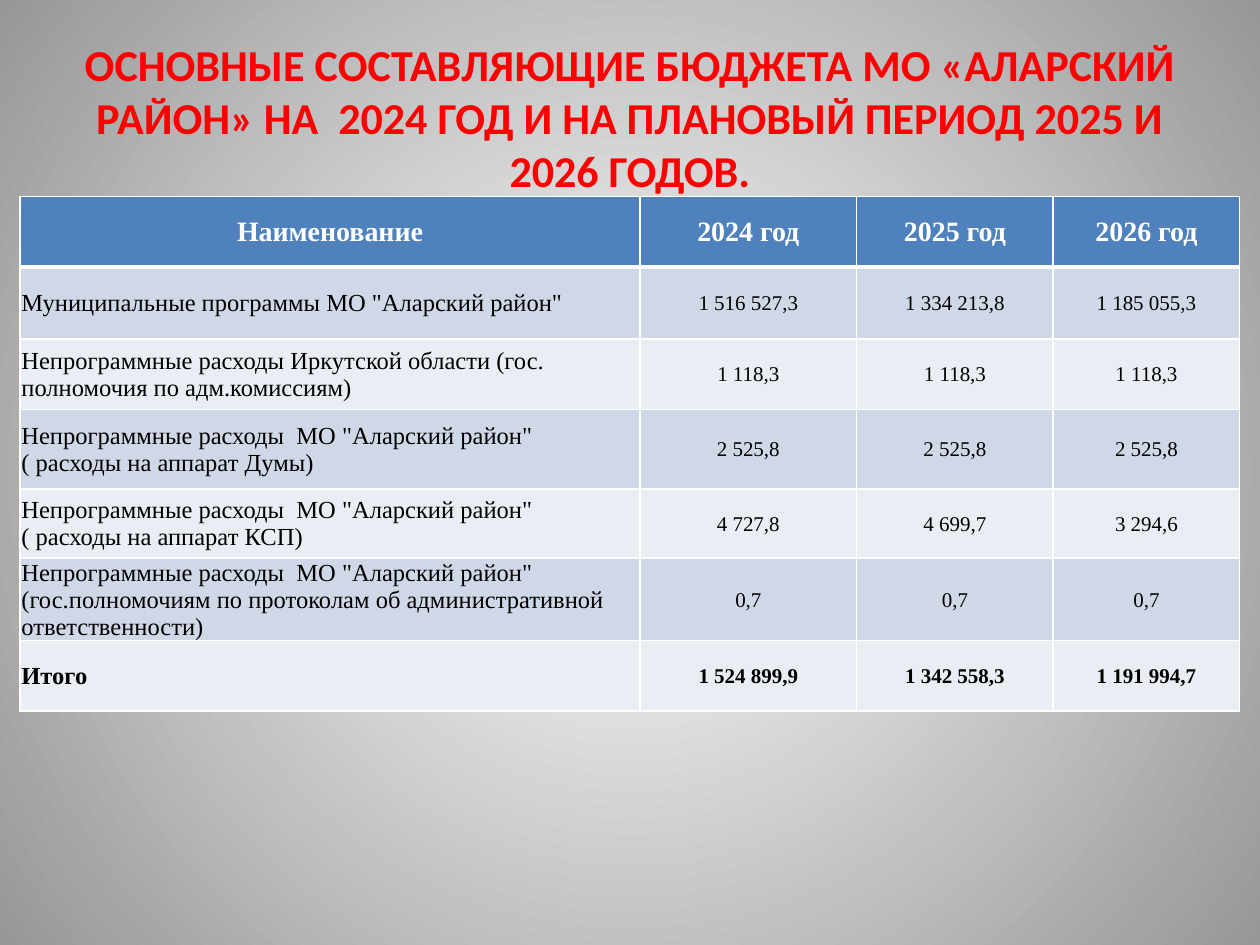
from lxml.etree import SubElement
from pptx import Presentation
from pptx.dml.color import RGBColor
from pptx.enum.text import MSO_ANCHOR, MSO_AUTO_SIZE, PP_ALIGN
from pptx.oxml.ns import qn
from pptx.util import Inches, Pt

COLORS = {
    "center": "FFFFFF", "edge": "979797", "title": "FF0000",
    "header": "4F81BD", "header_text": "FFFFFF", "text": "000000",
    "odd_row": "D0D8E8", "even_row": "E9EDF4", "border": "FFFFFF",
}
TITLE = ("ОСНОВНЫЕ СОСТАВЛЯЮЩИЕ БЮДЖЕТА МО «АЛАРСКИЙ РАЙОН» НА  2024 ГОД "
         "И НА ПЛАНОВЫЙ ПЕРИОД 2025 И 2026 ГОДОВ.")
BUDGET = [
    ("Наименование", "2024 год", "2025 год", "2026 год"),
    ('Муниципальные программы МО "Аларский район"',
     "1 516 527,3", "1 334 213,8", "1 185 055,3"),
    ("Непрограммные расходы Иркутской области (гос. полномочия по адм.комиссиям)",
     "1 118,3", "1 118,3", "1 118,3"),
    ('Непрограммные расходы  МО "Аларский район" ( расходы на аппарат Думы)',
     "2 525,8", "2 525,8", "2 525,8"),
    ('Непрограммные расходы  МО "Аларский район" ( расходы на аппарат КСП)',
     "4 727,8", "4 699,7", "3 294,6"),
    ('Непрограммные расходы  МО "Аларский район" (гос.полномочиям по '
     "протоколам об административной ответственности)", "0,7", "0,7", "0,7"),
    ("Итого", "1 524 899,9", "1 342 558,3", "1 191 994,7"),
]
COLUMN_WIDTHS = [4.92, 1.72, 1.56, 1.48]
ROW_HEIGHTS = [0.56, 0.57, 0.56, 0.63, 0.55, 0.65, 0.56]


def rgb(name):
    return RGBColor.from_string(COLORS[name])


def apply_format(target, values):
    for attribute, value in values.items():
        setattr(target, attribute, value)


def write_text(frame, text, align, color, **font_values):
    frame.text = text
    paragraph = frame.paragraphs[0]
    paragraph.alignment = align
    font = paragraph.runs[0].font
    apply_format(font, font_values)
    font.color.rgb = rgb(color)


def set_radial_background(slide):
    fill = slide.background.fill
    fill.gradient()
    for stop, name, position in zip(fill.gradient_stops, ("center", "edge"), (0, 1)):
        stop.color.rgb = rgb(name)
        stop.position = position
    gradient = slide.element.find(".//" + qn("a:gradFill"))
    gradient.remove(gradient.find(qn("a:lin")))
    circle = SubElement(gradient, qn("a:path"), {"path": "circle"})
    SubElement(circle, qn("a:fillToRect"), dict.fromkeys("ltrb", "50000"))


def add_title(slide, slide_width, slide_height):
    title = slide.shapes.title
    apply_format(title, {
        "left": int(slide_width * 0.05), "top": int(slide_height * 0.04),
        "width": int(slide_width * 0.9), "height": Inches(1.25),
    })
    write_text(title.text_frame, TITLE, PP_ALIGN.CENTER, "title",
               name="Calibri", size=Pt(25.2), bold=True)
    apply_format(title.text_frame, {
        "auto_size": MSO_AUTO_SIZE.NONE, "word_wrap": True,
        "vertical_anchor": MSO_ANCHOR.MIDDLE,
    })


def set_borders(cell, row):
    """Draw thin borders, with a thick rule between the header and the body."""
    widths = {"L": 1, "R": 1, "T": 3 if row == 1 else 1, "B": 3 if row == 0 else 1}
    properties = cell._tc.get_or_add_tcPr()
    for side, width in widths.items():
        line = SubElement(properties, qn(f"a:ln{side}"), {"w": str(Pt(width))})
        solid = SubElement(line, qn("a:solidFill"))
        SubElement(solid, qn("a:srgbClr"), {"val": COLORS["border"]})


def format_cell(cell, text, row, column):
    is_header = row == 0
    is_label = column == 0 and not is_header
    set_borders(cell, row)
    cell.fill.solid()
    cell.fill.fore_color.rgb = rgb(
        "header" if is_header else "odd_row" if row % 2 else "even_row")
    apply_format(cell, {
        "margin_left": Inches(0.01), "margin_right": Inches(0.01),
        "margin_top": Inches(0.01), "margin_bottom": 0,
        "vertical_anchor": MSO_ANCHOR.MIDDLE,
    })
    write_text(cell.text_frame, text,
               PP_ALIGN.LEFT if is_label else PP_ALIGN.CENTER,
               "header_text" if is_header else "text",
               name="Times New Roman",
               size=Pt(16 if is_header else 14 if is_label else 12),
               bold=row in (0, len(BUDGET) - 1))


def add_budget_table(slide):
    table = slide.shapes.add_table(
        len(BUDGET), len(COLUMN_WIDTHS), Inches(0.16), Inches(1.56),
        Inches(sum(COLUMN_WIDTHS)), Inches(sum(ROW_HEIGHTS))).table
    for column, width in zip(table.columns, COLUMN_WIDTHS):
        column.width = Inches(width)
    for row, height in zip(table.rows, ROW_HEIGHTS):
        row.height = Inches(height)
    for row, entries in enumerate(BUDGET):
        for column, text in enumerate(entries):
            format_cell(table.cell(row, column), text, row, column)


def main():
    deck = Presentation()
    deck.slide_width, deck.slide_height = Inches(10), Inches(7.5)
    slide = deck.slides.add_slide(deck.slide_layouts.get_by_name("Title Only"))
    set_radial_background(slide)
    add_title(slide, deck.slide_width, deck.slide_height)
    add_budget_table(slide)
    deck.save("out.pptx")


if __name__ == "__main__":
    main()
